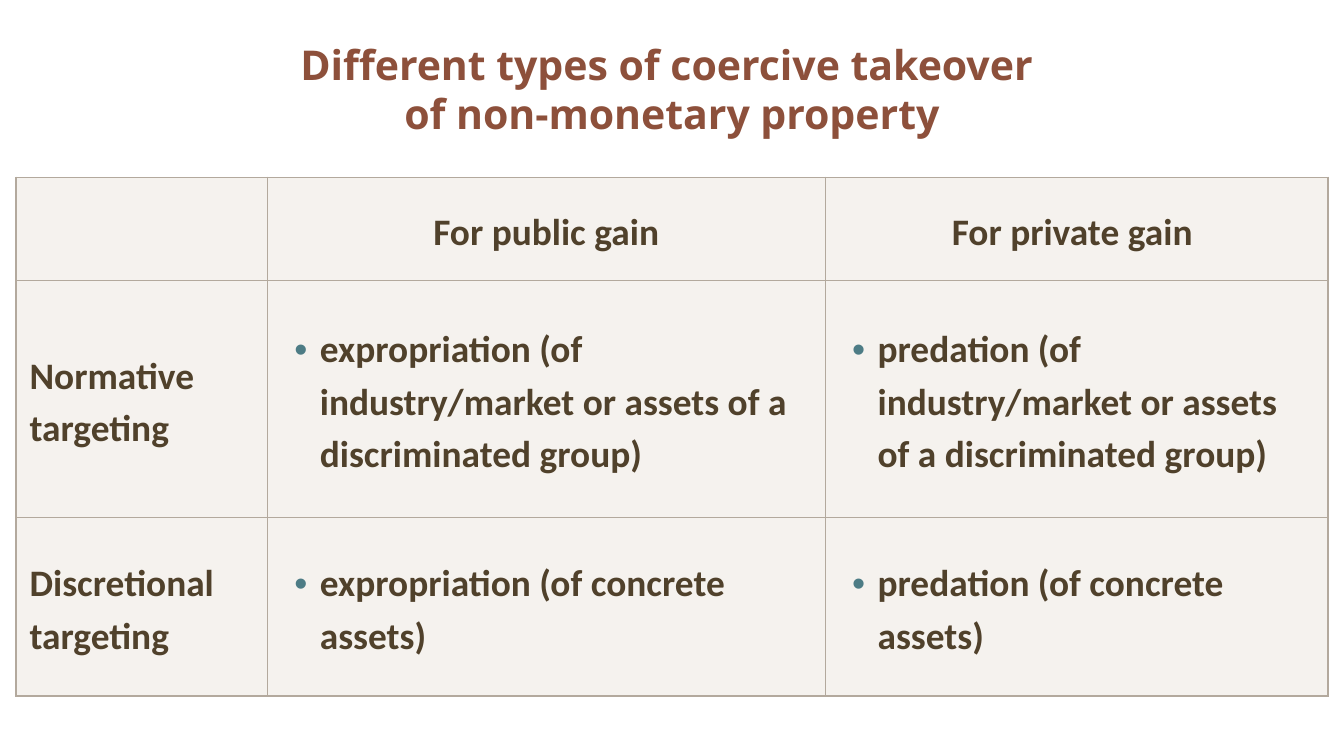
import lxml.etree
import pptx
import pptx.dml.color
import pptx.enum.text
import pptx.oxml.ns
import pptx.util

Inches = pptx.util.Inches
Pt = pptx.util.Pt
qn = pptx.oxml.ns.qn
ALIGN = pptx.enum.text.PP_ALIGN
MIDDLE = pptx.enum.text.MSO_ANCHOR.MIDDLE

SLIDE_WIDTH = 10
SLIDE_HEIGHT = SLIDE_WIDTH * 9 / 16
TITLE = "Different types of coercive takeover \vof non-monetary property"
COLUMN_WIDTHS = [1.87, 4.15, 3.74]
ROW_HEIGHTS = [0.77, 1.76, 1.33]
ROWS = [
    ["", "For public gain", "For private gain "],
    [
        "Normative targeting",
        "expropriation (of industry/market or assets of a discriminated group)",
        "predation (of industry/market or assets of a discriminated group)",
    ],
    [
        "Discretional targeting",
        "expropriation (of concrete assets)",
        "predation (of concrete assets)",
    ],
]


def color(value):
    return pptx.dml.color.RGBColor.from_string(value)


def set_attributes(target, values):
    for name, value in values.items():
        setattr(target, name, value)


def add_element(parent, tag, **attributes):
    return lxml.etree.SubElement(parent, qn(tag), attributes)


class SlideBuilder:
    """Holds the style and the current slide."""

    title_font = {"name": "Open Sans", "size": Pt(22), "bold": True}
    title_color = "8D503B"
    cell_font = {"name": "Calibri", "size": Pt(20), "bold": True}
    cell_color = "50412B"
    cell_fill = "EFEAE4"
    cell_opacity = 60
    cell_format = {
        "vertical_anchor": MIDDLE,
        "margin_left": Inches(0.1),
        "margin_right": Inches(0.1),
        "margin_top": Inches(0.04),
        "margin_bottom": Inches(0.04),
    }
    border_color = "B3A99D"
    outer_border, inner_border = 1, 0.5
    bullet_color = "4D7C85"

    def __init__(self, slide):
        self.slide = slide

    def add_title(self, text, left, top, width, height):
        shape = self.slide.shapes.add_textbox(
            Inches(left), Inches(top), Inches(width), Inches(height))
        set_attributes(shape.text_frame, {"word_wrap": True, "vertical_anchor": MIDDLE})
        paragraph = shape.text_frame.paragraphs[0]
        set_attributes(paragraph, {"text": text, "alignment": ALIGN.CENTER})
        for run in paragraph.runs:
            set_attributes(run.font, self.title_font)
            run.font.color.rgb = color(self.title_color)

    def add_table(self, rows, left, top, column_widths, row_heights):
        table = self.slide.shapes.add_table(
            len(rows), len(column_widths), Inches(left), Inches(top),
            Inches(sum(column_widths)), Inches(sum(row_heights))).table
        set_attributes(table, {"first_row": False, "horz_banding": False})
        for column, width in zip(table.columns, column_widths):
            column.width = Inches(width)
        for row, height in zip(table.rows, row_heights):
            row.height = Inches(height)
        last_row, last_column = len(rows) - 1, len(column_widths) - 1
        for i, texts in enumerate(rows):
            for j, text in enumerate(texts):
                cell = table.cell(i, j)
                set_attributes(cell, self.cell_format)
                self.set_borders(cell, {
                    "a:lnL": j == 0, "a:lnR": j == last_column,
                    "a:lnT": i == 0, "a:lnB": i == last_row})
                self.set_fill(cell)
                self.write_cell(cell, text, is_header=i == 0, has_bullet=i > 0 and j > 0)

    def set_borders(self, cell, outer_sides):
        """Draw each side, heavier where it lies on the table's edge."""
        properties = cell._tc.get_or_add_tcPr()
        for tag, is_outer in outer_sides.items():
            width = self.outer_border if is_outer else self.inner_border
            line = add_element(properties, tag, w=str(Pt(width)))
            fill = add_element(line, "a:solidFill")
            add_element(fill, "a:srgbClr", val=self.border_color)

    def set_fill(self, cell):
        cell.fill.solid()
        cell.fill.fore_color.rgb = color(self.cell_fill)
        fill_color = cell._tc.tcPr.find(qn("a:solidFill")).find(qn("a:srgbClr"))
        add_element(fill_color, "a:alpha", val=str(self.cell_opacity * 1000))

    def write_cell(self, cell, text, is_header, has_bullet):
        paragraph = cell.text_frame.paragraphs[0]
        set_attributes(paragraph, {
            "text": text, "line_spacing": 1.15,
            "alignment": ALIGN.CENTER if is_header else ALIGN.LEFT})
        if has_bullet:
            self.add_bullet(paragraph)
        for run in paragraph.runs:
            set_attributes(run.font, self.cell_font)
            run.font.color.rgb = color(self.cell_color)

    def add_bullet(self, paragraph):
        properties = paragraph._p.get_or_add_pPr()
        properties.set("marL", str(Inches(0.29)))
        properties.set("indent", str(Inches(-0.19)))
        bullet_fill = add_element(properties, "a:buClr")
        add_element(bullet_fill, "a:srgbClr", val=self.bullet_color)
        add_element(properties, "a:buFont", typeface="Arial")
        add_element(properties, "a:buChar", char="•")


def main():
    presentation = pptx.Presentation()
    presentation.slide_width = Inches(SLIDE_WIDTH)
    presentation.slide_height = Inches(SLIDE_HEIGHT)
    builder = SlideBuilder(presentation.slides.add_slide(presentation.slide_layouts[6]))
    builder.add_title(TITLE, 0.12, 0, 9.76, 1.32)
    builder.add_table(ROWS, 0.12, 1.32, COLUMN_WIDTHS, ROW_HEIGHTS)
    presentation.save("out.pptx")


if __name__ == "__main__":
    main()
